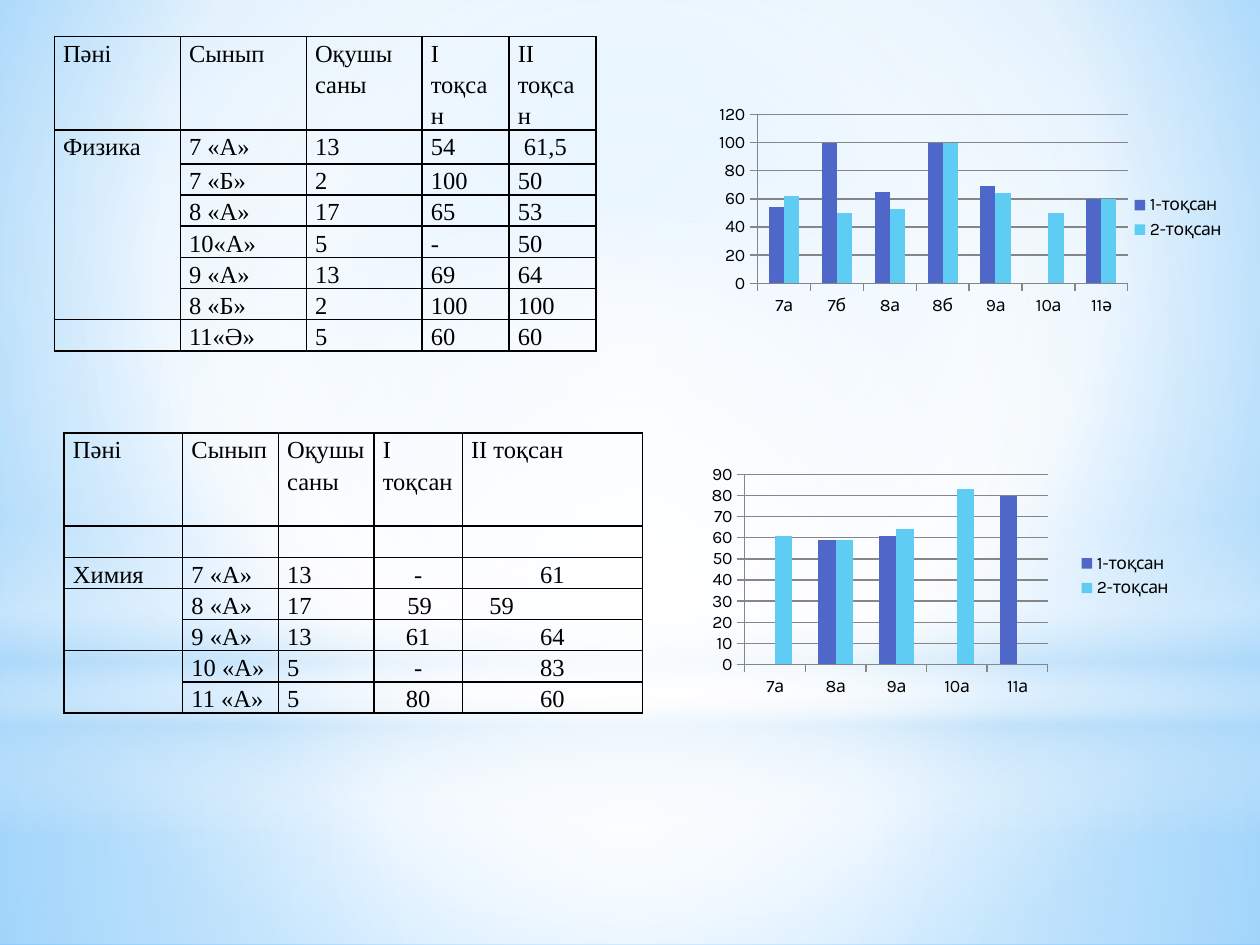
from dataclasses import dataclass
from typing import NamedTuple, Optional

from pptx import Presentation
from pptx.chart.data import CategoryChartData
from pptx.dml.color import RGBColor
from pptx.enum.chart import XL_CHART_TYPE, XL_LEGEND_POSITION, XL_TICK_MARK
from pptx.enum.shapes import MSO_SHAPE
from pptx.enum.text import PP_ALIGN
from pptx.oxml import parse_xml
from pptx.oxml.ns import nsdecls
from pptx.util import Pt


@dataclass(frozen=True)
class Theme:
    ink: str = "000000"
    grid: str = "868686"
    white: str = "FFFFFF"
    mist: str = "B4DCFA"
    sky: str = "9ED5FF"
    deep_sky: str = "5BB9FF"
    series: tuple = ("4E67C8", "5ECCF3")
    table_font: str = "Times New Roman"
    table_size: int = 14
    chart_font: str = "Karla"
    chart_size: int = 10
    line_spacing: float = 1.15


THEME = Theme()
CENTRE = (50, 50, 50, 50)


class Box(NamedTuple):
    left: float
    top: float
    width: float
    height: float

    def lengths(self) -> list:
        return [Pt(value) for value in self]


class Stop(NamedTuple):
    position: int
    colour: str
    opacity: int = 100


class Backdrop(NamedTuple):
    preset: MSO_SHAPE
    box: Box
    stops: list
    focus: Optional[tuple] = CENTRE


class GradeTable(NamedTuple):
    box: Box
    widths: list
    heights: list
    rows: list
    merges: list      # (first row, last row) in the subject column
    centred: set      # (row, column)
    indents: dict     # (row, column) -> extra left margin


class GradeChart(NamedTuple):
    box: Box
    categories: list
    series: dict
    plot: tuple       # x, y, w, h as shares of the chart


def gradient(stops: list, focus: Optional[tuple]):
    """Circular gradient around focus, or a vertical one when focus is None."""
    marks = "".join(
        f'<a:gs pos="{stop.position * 1000}"><a:srgbClr val="{stop.colour}">'
        f'<a:alpha val="{stop.opacity * 1000}"/></a:srgbClr></a:gs>' for stop in stops)
    if focus:
        edges = " ".join(f'{side}="{share * 1000}"' for side, share in zip("ltrb", focus))
        course = f'<a:path path="circle"><a:fillToRect {edges}/></a:path>'
    else:
        course = '<a:lin ang="5400000" scaled="0"/>'
    return parse_xml(f'<a:gradFill {nsdecls("a")} rotWithShape="1">'
                     f'<a:gsLst>{marks}</a:gsLst>{course}</a:gradFill>')


def apply_gradient(owner, fill, stops: list, focus: Optional[tuple]) -> None:
    fill.background()
    blank = owner.element.xpath(".//a:noFill")[0]
    blank.getparent().replace(blank, gradient(stops, focus))


def draw_backdrop(page, item: Backdrop) -> None:
    shape = page.shapes.add_shape(item.preset, *item.box.lengths())
    shape.shadow.inherit = False
    apply_gradient(shape, shape.fill, item.stops, item.focus)
    shape.line.fill.background()


def format_font(font, **values) -> None:
    for name, value in values.items():
        setattr(font, name, value)
    font.color.rgb = RGBColor.from_string(THEME.ink)


def add_borders(cell) -> None:
    properties = cell._tc.get_or_add_tcPr()
    for side in ("lnL", "lnR", "lnT", "lnB"):
        properties.append(parse_xml(
            f'<a:{side} {nsdecls("a")} w="{Pt(1)}"><a:solidFill>'
            f'<a:srgbClr val="{THEME.ink}"/></a:solidFill></a:{side}>'))


def fill_cell(cell, text: str, indent: float, alignment) -> None:
    add_borders(cell)
    cell.fill.background()
    margins = dict(margin_left=Pt(5 + indent), margin_right=Pt(5),
                   margin_top=0, margin_bottom=0)
    for name, value in margins.items():
        setattr(cell, name, value)
    cell.text = text
    for para in cell.text_frame.paragraphs:
        para.alignment = alignment
        para.line_spacing = THEME.line_spacing
        format_font(para.font, name=THEME.table_font, size=Pt(THEME.table_size))
        for span in para.runs:
            format_font(span.font, name=THEME.table_font, size=Pt(THEME.table_size))


def draw_table(page, item: GradeTable) -> None:
    table = page.shapes.add_table(len(item.rows), len(item.widths), *item.box.lengths()).table
    table.first_row = table.horz_banding = False
    for column, width in zip(table.columns, item.widths):
        column.width = Pt(width)
    for row, height in zip(table.rows, item.heights):
        row.height = Pt(height)
    for y, texts in enumerate(item.rows):
        for x, text in enumerate(texts):
            alignment = PP_ALIGN.CENTER if (y, x) in item.centred else PP_ALIGN.LEFT
            fill_cell(table.cell(y, x), text, item.indents.get((y, x), 0), alignment)
    for first, last in item.merges:
        table.cell(first, 0).merge(table.cell(last, 0))


def place_plot(chart, shares: tuple) -> None:
    area = chart.element.xpath(".//c:plotArea")[0]
    for old in area.xpath("c:layout"):
        area.remove(old)
    sizes = "".join(f'<c:{name} val="{share}"/>' for name, share in zip("xywh", shares))
    area.insert(0, parse_xml(
        f'<c:layout {nsdecls("c")}><c:manualLayout><c:layoutTarget val="inner"/>'
        f'<c:xMode val="edge"/><c:yMode val="edge"/>{sizes}</c:manualLayout></c:layout>'))


def draw_chart(page, item: GradeChart) -> None:
    data = CategoryChartData()
    data.categories = item.categories
    for name, values in item.series.items():
        data.add_series(name, values)
    chart = page.shapes.add_chart(
        XL_CHART_TYPE.COLUMN_CLUSTERED, *item.box.lengths(), data).chart
    format_font(chart.font, name=THEME.chart_font, size=Pt(THEME.chart_size))
    chart.has_title = False
    chart.has_legend = True
    chart.legend.position = XL_LEGEND_POSITION.RIGHT
    chart.legend.include_in_layout = False
    plot = chart.plots[0]
    for name, value in dict(gap_width=150, overlap=0, vary_by_categories=False).items():
        setattr(plot, name, value)
    for series, colour in zip(plot.series, THEME.series):
        series.format.fill.solid()
        series.format.fill.fore_color.rgb = RGBColor.from_string(colour)
    chart.value_axis.has_major_gridlines = True
    for axis in (chart.category_axis, chart.value_axis):
        axis.major_tick_mark = XL_TICK_MARK.OUTSIDE
    for part in (chart.category_axis, chart.value_axis, chart.value_axis.major_gridlines):
        part.format.line.width = Pt(0.75)
        part.format.line.color.rgb = RGBColor.from_string(THEME.grid)
    place_plot(chart, item.plot)


WHITE, MIST = THEME.white, THEME.mist
BACKDROPS = [
    Backdrop(MSO_SHAPE.RECTANGLE, Box(0, 402, 720, 138),
             [Stop(0, WHITE, 91), Stop(37, WHITE, 76), Stop(100, MIST, 79)]),
    Backdrop(MSO_SHAPE.RECTANGLE, Box(0, 0, 720, 402),
             [Stop(0, WHITE, 89), Stop(48, WHITE, 62), Stop(100, MIST, 79)]),
    Backdrop(MSO_SHAPE.RECTANGLE, Box(0, 297, 720, 180),
             [Stop(0, WHITE, 0), Stop(29, WHITE, 30), Stop(45, MIST, 40),
              Stop(55, WHITE, 26), Stop(65, MIST, 60), Stop(100, WHITE, 0)], None),
    Backdrop(MSO_SHAPE.OVAL, Box(0, 126, 720, 402), [Stop(0, WHITE), Stop(56, WHITE, 0)]),
]
PHYSICS_TABLE = GradeTable(
    Box(31, 20.9, 309.6, 179.4), [72, 72, 66.2, 49.7, 49.7], [53.2, 19.4] + [17.8] * 6,
    [["Пәні", "Сынып", "Оқушы саны", "І тоқсан", "ІІ\nтоқсан"],
     ["Физика", "7 «А»", "13", "54", "61,5"],
     ["", "7 «Б»", "2", "100", "50"],
     ["", "8 «А»", "17", "65", "53"],
     ["", "10«А»", "5", "-", "50"],
     ["", "9 «А»", "13", "69", "64"],
     ["", "8 «Б»", "2", "100", "100"],
     ["", "11«Ә»", "5", "60", "60"]],
    [(1, 6)], set(), {(1, 4): 3.5})
CHEMISTRY_TABLE = GradeTable(
    Box(36.7, 247.5, 331.2, 160), [67.7, 54.7, 54.7, 50.4, 103], [53.2] + [17.8] * 6,
    [["Пәні", "Сынып", "Оқушы саны", "І тоқсан", "II тоқсан"],
     [""] * 5,
     ["Химия", "7 «А»", "13", "-", "61"],
     ["", "8 «А»", "17", "59", "59"],
     ["", "9 «А»", "13", "61", "64"],
     ["", "10 «А»", "5", "-", "83"],
     ["", "11 «А»", "5", "80", "60"]],
    [(3, 4), (5, 6)], {(y, x) for y in (2, 4, 5, 6) for x in (3, 4)},
    {(3, 3): 14, (3, 4): 10.5})
PHYSICS_CHART = GradeChart(
    Box(360, 49, 347, 150.5), ["7а", "7б", "8а", "8б", "9а", "10а", "11ә"],
    {"1-тоқсан": [54, 100, 65, 100, 69, None, 60],
     "2-тоқсан": [62, 50, 53, 100, 64, 50, 60]}, (0.21, 0.11, 0.61, 0.64))
CHEMISTRY_CHART = GradeChart(
    Box(388, 258.5, 288.7, 141), ["7а", "8а", "9а", "10а", "11а"],
    {"1-тоқсан": [None, 59, 61, None, 80],
     "2-тоқсан": [61, 59, 64, 83, None]}, (0.13, 0.09, 0.6, 0.77))


def main() -> None:
    deck = Presentation()
    deck.slide_width, deck.slide_height = Pt(720), Pt(540)
    page = deck.slides.add_slide(deck.slide_layouts[6])
    apply_gradient(page, page.background.fill,
                   [Stop(0, THEME.sky), Stop(60, WHITE), Stop(100, THEME.deep_sky)],
                   (20, 10, 20, 60))
    for backdrop in BACKDROPS:
        draw_backdrop(page, backdrop)
    for table, chart in ((PHYSICS_TABLE, PHYSICS_CHART), (CHEMISTRY_TABLE, CHEMISTRY_CHART)):
        draw_table(page, table)
        draw_chart(page, chart)
    deck.save("out.pptx")


if __name__ == "__main__":
    main()
